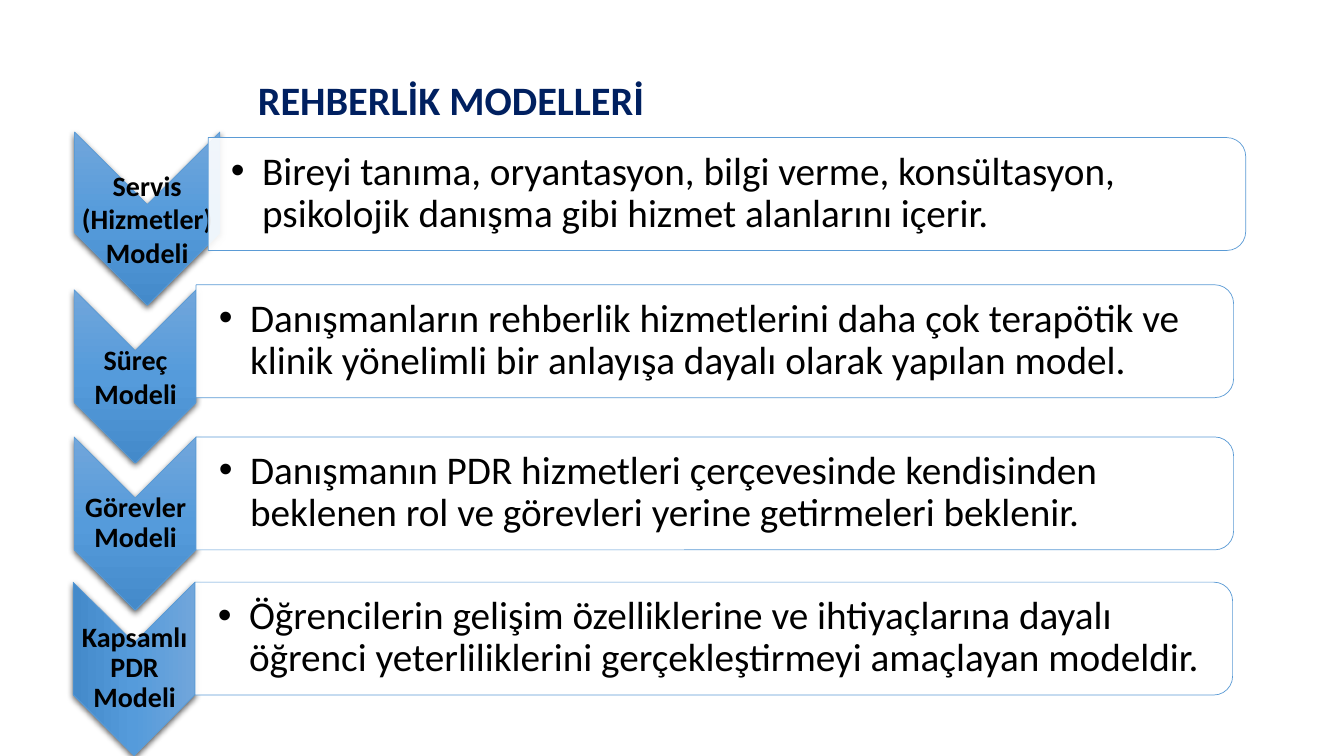
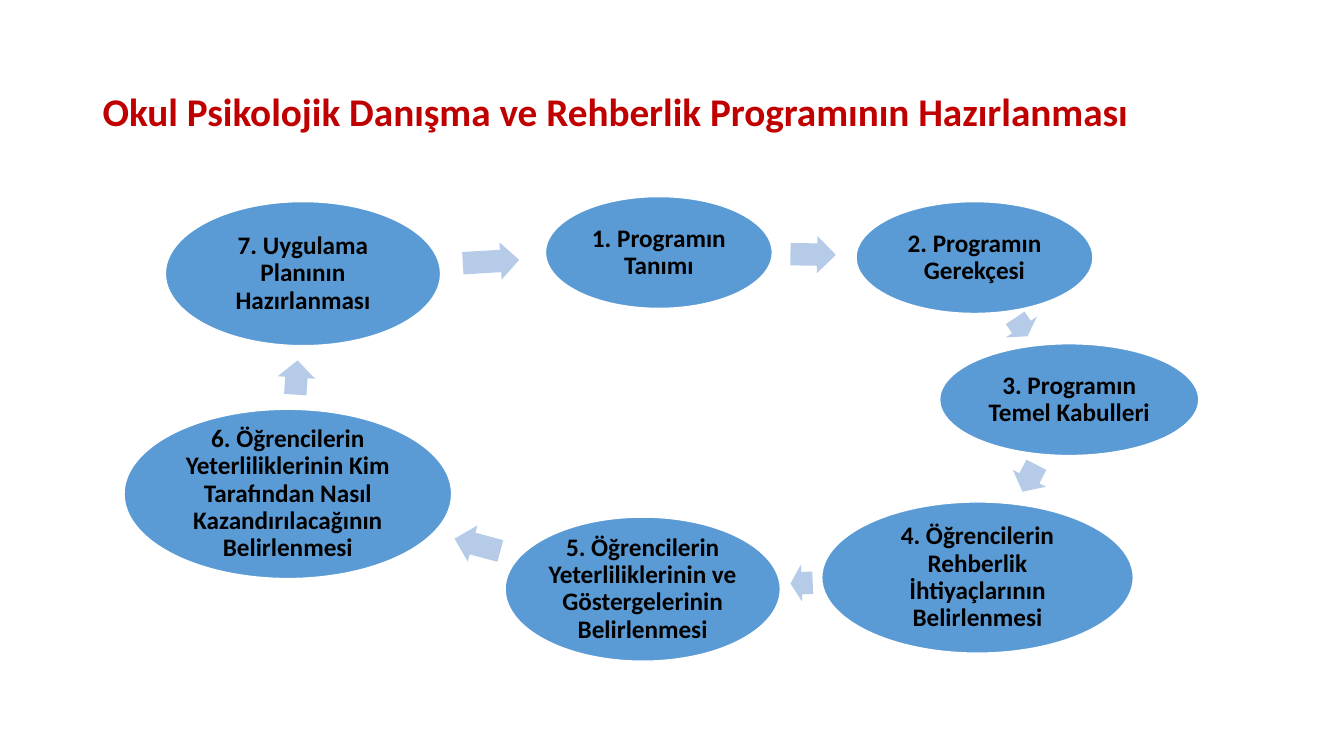
from dataclasses import dataclass

from lxml import etree
from pptx import Presentation, util as u
from pptx.dml.color import RGBColor
from pptx.enum import shapes, text
from pptx.oxml import ns

PX = 9144  # EMU per px, 100 px to the inch
FONT = "Calibri"
NAVY, RED, BLACK, WHITE = "002060", "C00000", "000000", "FFFFFF"
BLUE, PALE_BLUE = "5B9BD5", "B5CBE7"
CHEVRON_STOPS = ((0, "71A6DB"), (50, "559BDB"), (100, "448ACA"))
CHEVRON_H, PANEL_W, PANEL_H = 172, 1029, 112
BULLET_INDENT = 31
PRESET = shapes.MSO_SHAPE


@dataclass
class Box:
    left: int
    top: int
    width: int
    height: int

    def emu(self) -> list[int]:
        return [v * PX for v in (self.left, self.top, self.width, self.height)]

    def turned(self) -> "Box":
        """Frame that covers this box once it is rotated by 90 degrees."""
        shift = (self.width - self.height) // 2
        return Box(self.left + shift, self.top - shift, self.height, self.width)


@dataclass
class Model:
    label: list[str]
    description: str
    chevron: Box
    panel_left: int
    panel_top: int
    label_spacing: float = 0.9
    gradient_angle: int = 0


@dataclass
class Step:
    name: str
    ellipse: Box
    arrow: Box
    arrow_angle: float


MODELS = [
    Model(["Servis", "(Hizmetler)", "Modeli"],
          "Bireyi tanıma, oryantasyon, bilgi verme, konsültasyon, "
          "psikolojik danışma gibi hizmet alanlarını içerir.",
          Box(74, 131, 144, CHEVRON_H), 207, 136, label_spacing=1.0),
    Model(["Süreç", "Modeli"],
          "Danışmanların rehberlik hizmetlerini daha çok terapötik ve "
          "klinik yönelimli bir anlayışa dayalı olarak yapılan model.",
          Box(74, 287, 121, CHEVRON_H), 195, 282, label_spacing=1.0),
    Model(["Görevler Modeli"],
          "Danışmanın PDR hizmetleri çerçevesinde kendisinden "
          "beklenen rol ve görevleri yerine getirmeleri beklenir.",
          Box(74, 433, 121, CHEVRON_H), 195, 433),
    Model(["Kapsamlı PDR Modeli"],
          "Öğrencilerin gelişim özelliklerine ve ihtiyaçlarına dayalı "
          "öğrenci yeterliliklerini gerçekleştirmeyi amaçlayan modeldir.",
          Box(73, 577, 121, CHEVRON_H), 194, 577, gradient_angle=90),
]

# Each arrow leads from its step to the next one
STEPS = [
    Step("1. Programın Tanımı",
         Box(541, 195, 225, 111), Box(784, 234, 45, 37), 0.9),
    Step("2. Programın Gerekçesi",
         Box(849, 200, 235, 111), Box(1002, 306, 22, 37), 56.3),
    Step("3. Programın Temel Kabulleri",
         Box(932, 341, 257, 111), Box(1006, 456, 30, 37), 117.1),
    Step("4. Öğrencilerin Rehberlik İhtiyaçlarının Belirlenmesi",
         Box(815, 498, 309, 150), Box(784, 560, 22, 37), 178),
    Step("5. Öğrencilerin Yeterliliklerinin ve Göstergelerinin Belirlenmesi",
         Box(501, 513, 273, 143), Box(450, 522, 47, 37), 195),
    Step("6. Öğrencilerin Yeterliliklerinin Kim Tarafından Nasıl "
         "Kazandırılacağının Belirlenmesi",
         Box(123, 406, 325, 168), Box(277, 356, 34, 37), 273.9),
    Step("7. Uygulama Planının Hazırlanması",
         Box(164, 200, 273, 143), Box(459, 241, 56, 37), 356.6),
]


def rgb(color: str) -> RGBColor:
    return RGBColor.from_string(color)


def sub(parent, tag: str, **attributes):
    names = {key: str(value) for key, value in attributes.items()}
    return etree.SubElement(parent, ns.qn(tag), names)


def write(shape, lines: list[str], size: float, color: str = BLACK,
          bold: bool = True, align=text.PP_ALIGN.CENTER, spacing: float = 0.9,
          insets: tuple[int, int] = (1, 1), bullet: bool = False) -> None:
    """Fill a shape with paragraphs; insets are horizontal, vertical."""
    frame = shape.text_frame
    frame.word_wrap = True
    frame.vertical_anchor = text.MSO_ANCHOR.MIDDLE
    frame.margin_left = frame.margin_right = insets[0] * PX
    frame.margin_top = frame.margin_bottom = insets[1] * PX
    for i, line in enumerate(lines):
        paragraph = frame.add_paragraph() if i else frame.paragraphs[0]
        paragraph.alignment = align
        paragraph.line_spacing = spacing
        if bullet:
            props = paragraph._p.get_or_add_pPr()
            props.set("marL", str(BULLET_INDENT * PX))
            props.set("indent", str(-BULLET_INDENT * PX))
            sub(props, "a:buFont", typeface="Arial")
            sub(props, "a:buChar", char="•")
        run = paragraph.add_run()
        run.text = line
        run.font.name = FONT
        run.font.size = u.Pt(size)
        run.font.bold = bold
        run.font.color.rgb = rgb(color)


def add_text(slide, box: Box, lines: list[str], size: float, **style) -> None:
    write(slide.shapes.add_textbox(*box.emu()), lines, size, **style)


def add_title(slide, box: Box, title: str, size: float, color: str) -> None:
    add_text(slide, box, [title], size, color=color,
             align=text.PP_ALIGN.LEFT, insets=(10, 5))


def add_preset(slide, preset, box: Box, fill: str, line: str | None = None,
               line_width: float = 0.5, angle: float = 0):
    shape = slide.shapes.add_shape(preset, *box.emu())
    shape.shadow.inherit = False
    shape.rotation = angle
    shape.fill.solid()
    shape.fill.fore_color.rgb = rgb(fill)
    if line:
        shape.line.color.rgb = rgb(line)
        shape.line.width = u.Pt(line_width)
    else:
        shape.line.fill.background()
    return shape


def add_chevron(slide, box: Box, gradient_angle: int) -> None:
    chevron = add_preset(slide, PRESET.CHEVRON, box.turned(), BLUE, BLUE, angle=90)
    properties = chevron._element.spPr
    # Gradient in place of the solid fill
    solid = properties.find(ns.qn("a:solidFill"))
    gradient = etree.Element(ns.qn("a:gradFill"), {"rotWithShape": "1"})
    stops = sub(gradient, "a:gsLst")
    for position, color in CHEVRON_STOPS:
        sub(sub(stops, "a:gs", pos=position * 1000), "a:srgbClr", val=color)
    sub(gradient, "a:lin", ang=gradient_angle * 60000, scaled=0)
    properties.replace(solid, gradient)
    # Soft shadow below
    shadow = sub(properties.find(ns.qn("a:effectLst")), "a:outerShdw",
                 blurRad=u.Pt(4.5), dist=u.Pt(1.5), dir=5400000,
                 algn="ctr", rotWithShape=0)
    sub(sub(shadow, "a:srgbClr", val=BLACK), "a:alpha", val=63000)


def add_model(slide, model: Model) -> None:
    add_chevron(slide, model.chevron, model.gradient_angle)
    add_text(slide, model.chevron, model.label, 20, spacing=model.label_spacing)
    panel_box = Box(model.panel_left, model.panel_top, PANEL_W, PANEL_H)
    panel = add_preset(slide, PRESET.ROUND_2_SAME_RECTANGLE, panel_box.turned(),
                       WHITE, BLUE, angle=90)
    fill_color = panel._element.spPr.find(ns.qn("a:solidFill"))[0]
    sub(fill_color, "a:alpha", val=90000)
    # The text runs nearly to the right edge of its panel
    text_box = Box(panel_box.left, panel_box.top, PANEL_W + 15, PANEL_H)
    add_text(slide, text_box, [model.description], 28, bold=False,
             align=text.PP_ALIGN.LEFT, insets=(22, 2), bullet=True)


def add_step(slide, step: Step) -> None:
    ellipse = add_preset(slide, PRESET.OVAL, step.ellipse, BLUE, WHITE, 1)
    write(ellipse, [step.name], 18, insets=(3, 3))
    arrow = add_preset(slide, PRESET.RIGHT_ARROW, step.arrow, PALE_BLUE,
                       angle=step.arrow_angle)
    arrow.adjustments[0] = 0.6
    arrow.adjustments[1] = 0.5


def main() -> None:
    deck = Presentation()
    deck.slide_width, deck.slide_height = 1333 * PX, 750 * PX
    blank = deck.slide_layouts[6]

    # Guidance models
    models_slide = deck.slides.add_slide(blank)
    add_title(models_slide, Box(246, 67, 990, 70), "REHBERLİK MODELLERİ", 28.8, NAVY)
    for model in MODELS:
        add_model(models_slide, model)

    # Programme preparation cycle
    cycle_slide = deck.slides.add_slide(blank)
    add_title(cycle_slide, Box(92, 40, 1150, 145),
              "Okul Psikolojik Danışma ve Rehberlik Programının Hazırlanması", 28, RED)
    for step in STEPS:
        add_step(cycle_slide, step)

    deck.save("out.pptx")


if __name__ == "__main__":
    main()
